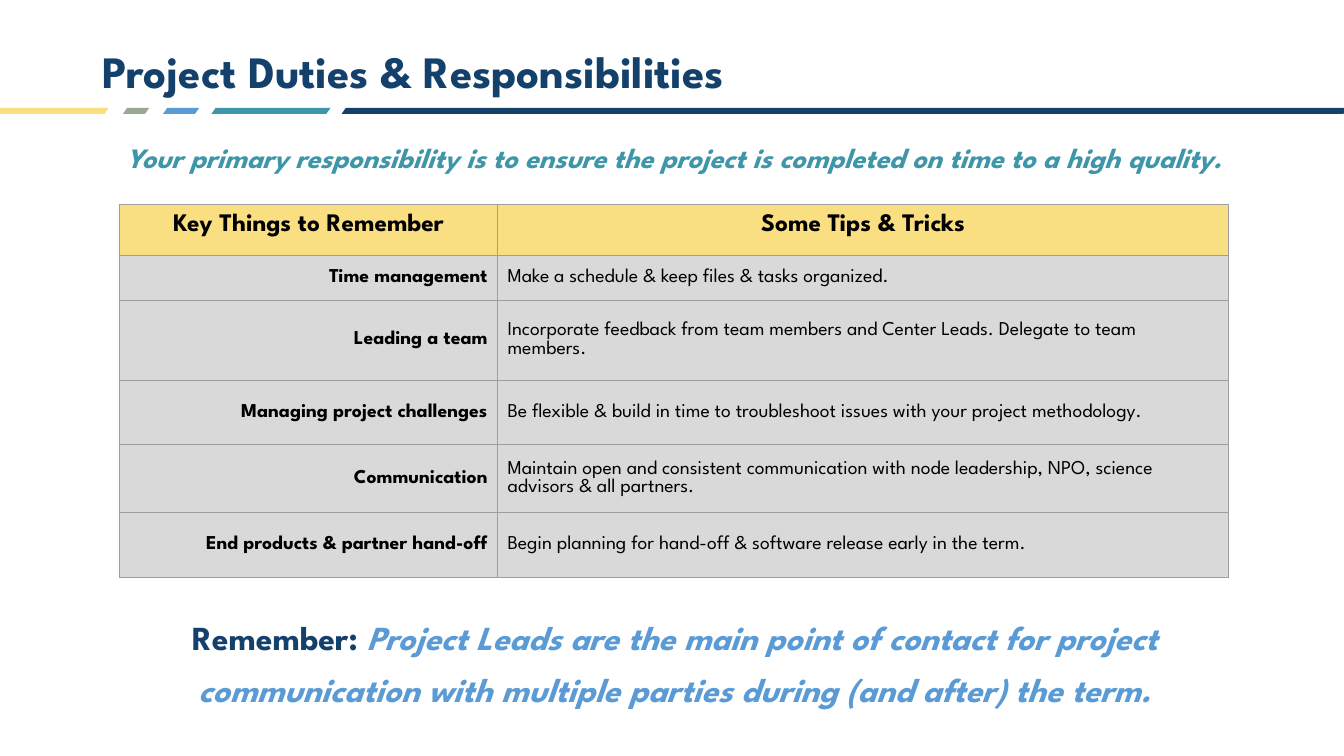
"""Builds the project duties slide with its banner, tips table and reminder."""
from lxml import etree
from pptx import Presentation, util as u
from pptx.dml.color import RGBColor
from pptx.enum import shapes, text
from pptx.oxml.ns import qn

THEME = {
    "font": "League Spartan",
    "navy": "13416C", "teal": "3E96A8", "blue": "5B9BD5", "sage": "99A893",
    "yellow": "FADF82", "grey": "D9D9D9", "border": "9E9E9E", "black": "000000",
    "title": 32, "lead": 20, "head": 18, "body": 14, "reminder": 24,
}
TITLE = "Project Duties & Responsibilities"
LEAD = "Your primary responsibility is to ensure the project is completed on time to a high quality."
HEADINGS = ("Key Things to Remember", "Some Tips & Tricks")
TIPS = [
    ("Time management", "Make a schedule & keep files & tasks organized."),
    ("Leading a team", "Incorporate feedback from team members and Center Leads. Delegate to team members."),
    ("Managing project challenges",
     "Be flexible & build in time to troubleshoot issues with your project methodology."),
    ("Communication",
     "Maintain open and consistent communication with node leadership, NPO, science advisors & all partners."),
    ("End products & partner hand-off", "Begin planning for hand-off & software release early in the term."),
]
REMINDER = (
    ("Remember: ", "navy", False),
    ("Project Leads are the main point of contact for project communication "
     "with multiple parties during (and after) the term.", "blue", True),
)
STRIPES = [
    ("yellow", -0.1, 2.84), ("sage", 3.1, 0.66), ("blue", 4.11, 0.91),
    ("teal", 5.33, 3.0), ("navy", 8.61, 25.35),
]
STRIPE_TOP, STRIPE_HEIGHT = 2.72, 0.15
COLUMNS = (9.52, 18.42)
ROWS = (1.28, 1.14, 2.01, 1.63, 1.71, 1.63)
TABLE_LEFT, TABLE_TOP = 3.02, 5.15
ALIGN, ANCHOR = text.PP_ALIGN, text.MSO_ANCHOR


def colour(name):
    return RGBColor.from_string(THEME[name])


def write(frame, runs, size, align=ALIGN.LEFT, anchor=ANCHOR.TOP, bold=True, spacing=1.0):
    """Fill a text frame with one paragraph of (text, colour, italic) runs."""
    frame.word_wrap = True
    frame.vertical_anchor = anchor
    para = frame.paragraphs[0]
    para.alignment = align
    para.line_spacing = spacing
    for words, ink, italic in runs:
        span = para.add_run()
        span.text = words
        font = span.font
        font.name, font.size = THEME["font"], u.Pt(THEME[size])
        font.bold, font.italic = bold, italic
        font.color.rgb = colour(ink)


def add_text(page, place, runs, size, **layout):
    box = page.shapes.add_textbox(*map(u.Cm, place))
    write(box.text_frame, runs, size, **layout)


def add_stripe(page, ink, left, width):
    stripe = page.shapes.add_shape(
        shapes.MSO_SHAPE.PARALLELOGRAM,
        u.Cm(left), u.Cm(STRIPE_TOP), u.Cm(width), u.Cm(STRIPE_HEIGHT))
    stripe.adjustments[0] = 0.7
    stripe.shadow.inherit = False
    stripe.fill.solid()
    stripe.fill.fore_color.rgb = colour(ink)
    stripe.line.fill.background()


def add_borders(cell):
    properties = cell._tc.get_or_add_tcPr()
    for index, side in enumerate(("lnL", "lnR", "lnT", "lnB")):
        line = etree.Element(qn(f"a:{side}"), w=str(u.Pt(0.75)))
        fill = etree.SubElement(line, qn("a:solidFill"))
        etree.SubElement(fill, qn("a:srgbClr"), val=THEME["border"])
        properties.insert(index, line)


def add_table(page):
    grid = page.shapes.add_table(
        len(ROWS), len(COLUMNS), u.Cm(TABLE_LEFT), u.Cm(TABLE_TOP),
        u.Cm(sum(COLUMNS)), u.Cm(sum(ROWS))).table
    for column, width in zip(grid.columns, COLUMNS):
        column.width = u.Cm(width)
    for row, height in zip(grid.rows, ROWS):
        row.height = u.Cm(height)
    for r, words in enumerate([HEADINGS, *TIPS]):
        for c, entry in enumerate(words):
            cell = grid.cell(r, c)
            cell.margin_left = cell.margin_right = u.Cm(0.25)
            cell.margin_top = cell.margin_bottom = u.Cm(0.25)
            cell.fill.solid()
            cell.fill.fore_color.rgb = colour("grey" if r else "yellow")
            add_borders(cell)
            runs = [(entry, "black", False)]
            if r == 0:
                write(cell.text_frame, runs, "head", align=ALIGN.CENTER)
            else:
                write(cell.text_frame, runs, "body", bold=c == 0,
                      align=ALIGN.LEFT if c else ALIGN.RIGHT)
                cell.vertical_anchor = ANCHOR.MIDDLE


def main():
    deck = Presentation()
    deck.slide_width, deck.slide_height = u.Cm(33.87), u.Cm(19.05)
    page = deck.slides.add_slide(deck.slide_layouts[6])
    for stripe in STRIPES:
        add_stripe(page, *stripe)
    add_text(page, (2.34, 1.02, 29.21, 1.7), [(TITLE, "navy", False)], "title",
             anchor=ANCHOR.MIDDLE, spacing=0.9)
    add_text(page, (1.7, 3.15, 30.61, 1.96), [(LEAD, "teal", True)], "lead",
             align=ALIGN.CENTER, spacing=1.3)
    add_table(page)
    add_text(page, (3.02, 15.11, 27.97, 2.31), REMINDER, "reminder",
             align=ALIGN.CENTER, spacing=1.3)
    deck.save("out.pptx")


if __name__ == "__main__":
    main()
